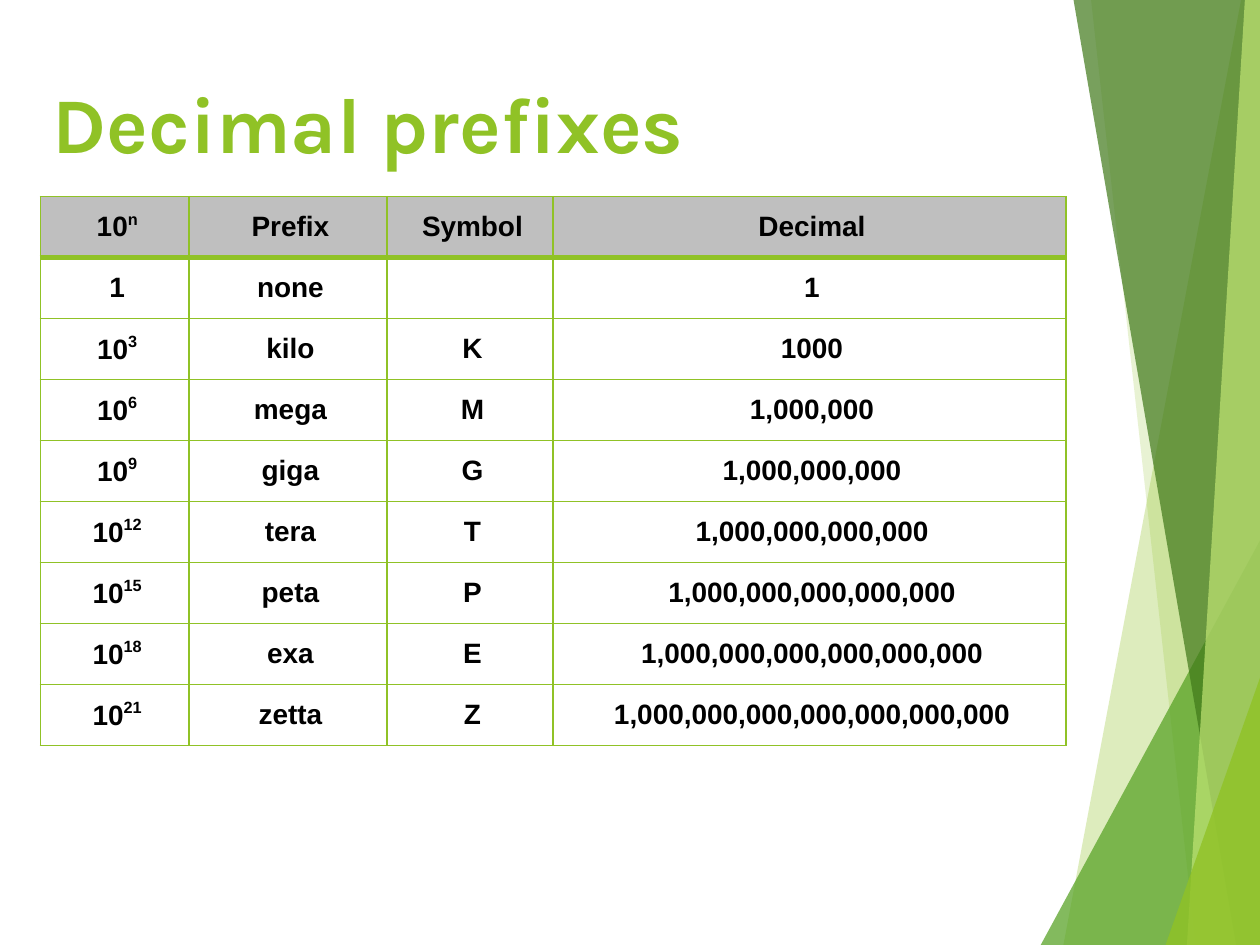
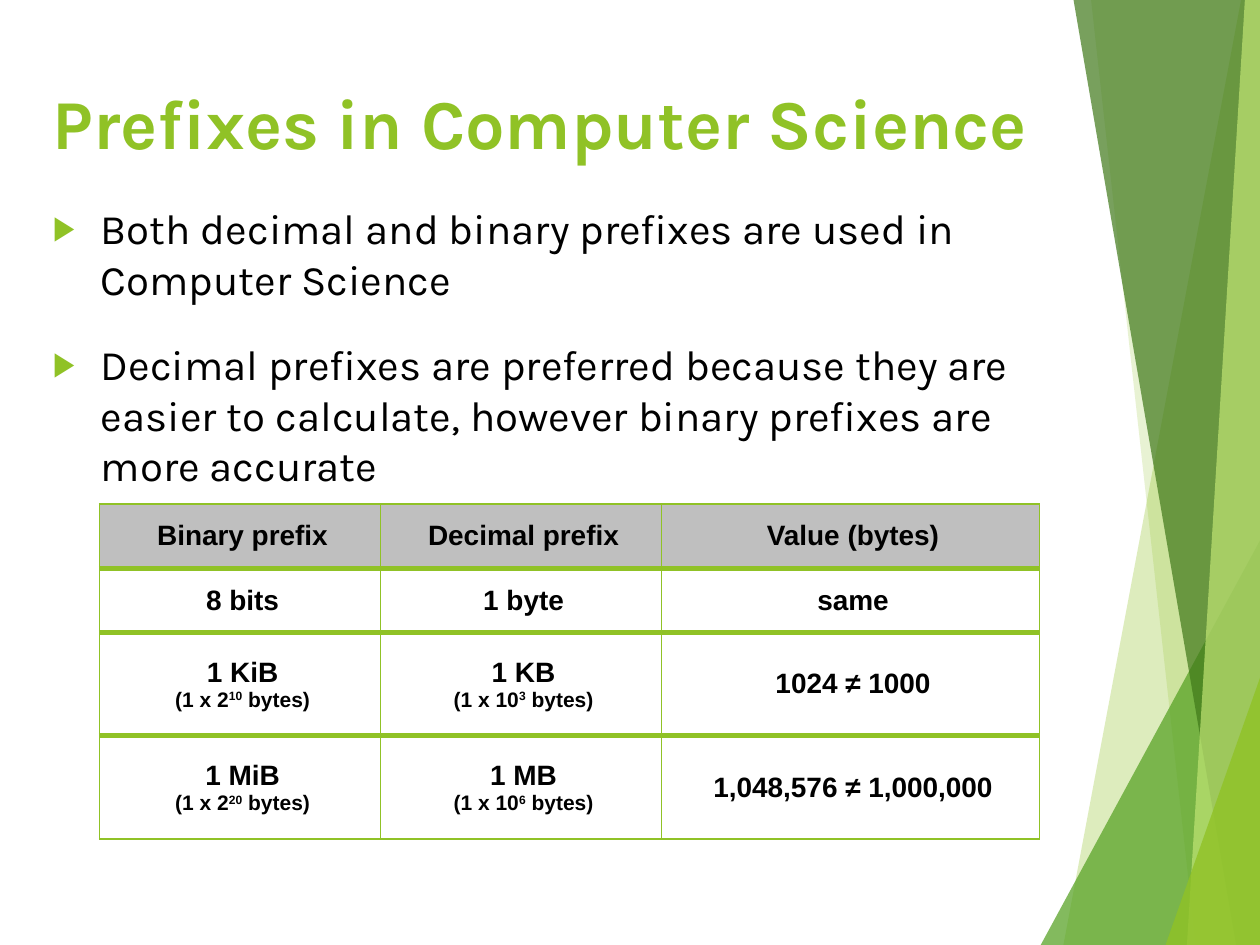
from lxml import etree
from pptx import Presentation
from pptx.dml.color import RGBColor
from pptx.enum.text import MSO_ANCHOR, MSO_AUTO_SIZE, PP_ALIGN
from pptx.oxml.ns import qn
from pptx.util import Emu, Inches, Pt

MIDDLE, TOP = MSO_ANCHOR.MIDDLE, MSO_ANCHOR.TOP
CENTER, LEFT = PP_ALIGN.CENTER, PP_ALIGN.LEFT
NO_FIT = MSO_AUTO_SIZE.NONE
TITLE_AND_CONTENT, TITLE_ONLY = 1, 5

# Content: ^ switches superscript on and off, a new line starts a small line
DECIMAL_ROWS = [["10^n", "Prefix", "Symbol", "Decimal"], ["1", "none", "", "1"]]
DECIMAL_ROWS += [
    [f"10^{power}", prefix, symbol, "1000" if power == 3 else f"{10 ** power:,}"]
    for power, prefix, symbol in [
        (3, "kilo", "K"), (6, "mega", "M"), (9, "giga", "G"), (12, "tera", "T"),
        (15, "peta", "P"), (18, "exa", "E"), (21, "zetta", "Z"),
    ]
]
SCIENCE_ROWS = [
    ["Binary prefix", "Decimal prefix", "Value (bytes)"],
    ["8 bits", "1 byte", "same"],
    ["1 KiB\n(1 x 2^10^ bytes)", "1 KB\n(1 x 10^3^ bytes)", "1024 ≠ 1000"],
    ["1 MiB\n(1 x 2^20^ bytes)", "1 MB\n(1 x 10^6^ bytes)", "1,048,576 ≠ 1,000,000"],
]
SCIENCE_POINTS = [
    "Both decimal and binary prefixes are used in Computer Science",
    "Decimal prefixes are preferred because they are easier to calculate, "
    "however binary prefixes are more accurate",
]

# Shared look
GREEN, GREY, BLACK = "90C226", "BFBFBF", "000000"
WIDTH, HEIGHT = 10, 7.5
MARGIN, TEXT_WIDTH, TITLE_TOP, BODY_TOP = 0.32, 7.94, 0.37, 1.56
CELL_FONT = {"name": "Arial", "bold": True}
BODY_FONT = {"name": "Karla", "size": Pt(24), "bold": False}
CELL_SIZE, SMALL_SIZE = 16, 12

# Facets on the right edge: colour, opacity in percent, corners
FACETS = [
    (GREEN, 30, [(9.85, 0), (8.44, HEIGHT), (WIDTH, HEIGHT), (WIDTH, 0)]),
    (GREEN, 20, [(8.66, 0), (9.49, HEIGHT), (WIDTH, HEIGHT), (WIDTH, 0)]),
    ("54A021", 72, [(8.26, HEIGHT), (WIDTH, 4.29), (WIDTH, HEIGHT)]),
    ("3F7819", 70, [(8.52, 0), (9.81, HEIGHT), (WIDTH, HEIGHT), (WIDTH, 0)]),
    ("C0E474", 70, [(9.88, 0), (9.42, HEIGHT), (WIDTH, HEIGHT), (WIDTH, 0)]),
    (GREEN, 80, [(9.25, HEIGHT), (WIDTH, 5.38), (WIDTH, HEIGHT)]),
]


def rgb(value):
    return RGBColor.from_string(value)


def set_attrs(target, values):
    for name, value in values.items():
        setattr(target, name, value)


def format_font(font, values, color):
    set_attrs(font, values)
    font.color.rgb = rgb(color)


def place(shape, left, top, width, height):
    set_attrs(shape, {"left": Inches(left), "top": Inches(top),
                      "width": Inches(width), "height": Inches(height)})


def add_facets(s):
    for color, opacity, corners in FACETS:
        points = [(Inches(x), Inches(y)) for x, y in corners]
        builder = s.shapes.build_freeform(*points[0])
        builder.add_line_segments(points[1:], close=True)
        sp = builder.convert_to_shape()
        sp.shadow.inherit = False
        sp.line.fill.background()
        sp.fill.solid()
        sp.fill.fore_color.rgb = rgb(color)
        clr = sp.fill._xPr.find(".//" + qn("a:srgbClr"))
        etree.SubElement(clr, qn("a:alpha"), val=str(opacity * 1000))


def add_slide(prs, layout, title, size):
    s = prs.slides.add_slide(prs.slide_layouts[layout])
    add_facets(s)
    place(s.shapes.title, MARGIN, TITLE_TOP, TEXT_WIDTH, BODY_TOP - TITLE_TOP)
    tf = s.shapes.title.text_frame
    set_attrs(tf, {"text": title, "vertical_anchor": MIDDLE,
                   "auto_size": NO_FIT, "word_wrap": True})
    p = tf.paragraphs[0]
    p.alignment = LEFT
    format_font(p.runs[0].font, {"name": "Karla", "size": Pt(size), "bold": True}, GREEN)
    return s


def fill_body(body, points):
    place(body, MARGIN, BODY_TOP, TEXT_WIDTH, 5.24)
    tf = body.text_frame
    set_attrs(tf, {"text": "\n".join(points), "vertical_anchor": TOP,
                   "auto_size": NO_FIT, "word_wrap": True})
    for p in tf.paragraphs:
        set_attrs(p, {"alignment": LEFT, "space_before": Pt(20)})
        format_font(p.runs[0].font, BODY_FONT, BLACK)
        pPr = p._p.get_or_add_pPr()
        pPr.set("marL", str(Inches(0.38)))
        pPr.set("indent", str(Inches(-0.38)))
        color = etree.SubElement(pPr, qn("a:buClr"))
        etree.SubElement(color, qn("a:srgbClr"), val=GREEN)
        etree.SubElement(pPr, qn("a:buSzPct"), val="80000")
        etree.SubElement(pPr, qn("a:buChar"), char="▶")


def write_cell(cell, text, raise_by):
    set_attrs(cell, dict.fromkeys(
        ("margin_left", "margin_right", "margin_top", "margin_bottom"), Inches(0.06)))
    cell.vertical_anchor = MIDDLE
    tf = cell.text_frame
    for i, line in enumerate(text.split("\n")):
        p = tf.add_paragraph() if i else tf.paragraphs[0]
        p.alignment = CENTER
        p._p.get_or_add_pPr().set("marL", str(Inches(0.04)))
        for j, part in enumerate(line.split("^")):
            if not part:
                continue
            r = p.add_run()
            r.text = part
            r.font.size = Pt(SMALL_SIZE if i else CELL_SIZE)
            format_font(r.font, CELL_FONT, BLACK)
            if j % 2:
                r.font._element.set("baseline", str(raise_by * 1000))


def set_borders(cell, above, below):
    tcPr = cell._tc.get_or_add_tcPr()
    sides = {"a:lnL": 1, "a:lnR": 1, "a:lnT": above, "a:lnB": below}
    for i, (side, points) in enumerate(sides.items()):
        ln = etree.Element(qn(side), w=str(Pt(points)))
        fill = etree.SubElement(ln, qn("a:solidFill"))
        etree.SubElement(fill, qn("a:srgbClr"), val=GREEN)
        tcPr.insert(i, ln)


def add_grid(s, rows, left, top, widths, heights, rules, raise_by):
    """rules holds the weight of each horizontal line, top to bottom."""
    frame = s.shapes.add_table(len(rows), len(widths), Inches(left), Inches(top),
                               Inches(sum(widths)), Inches(sum(heights)))
    table = frame.table
    set_attrs(table, {"first_row": False, "horz_banding": False})
    for column, width in zip(table.columns, widths):
        column.width = Inches(width)
    for i, (row, height) in enumerate(zip(rows, heights)):
        table.rows[i].height = Inches(height)
        for j, text in enumerate(row):
            cell = table.cell(i, j)
            write_cell(cell, text, raise_by)
            if i == 0:
                cell.fill.solid()
                cell.fill.fore_color.rgb = rgb(GREY)
            else:
                cell.fill.background()
            set_borders(cell, rules[i], rules[i + 1])


def main():
    prs = Presentation()
    prs.slide_width, prs.slide_height = Emu(Inches(WIDTH)), Emu(Inches(HEIGHT))

    # Decimal prefixes
    s = add_slide(prs, TITLE_ONLY, "Decimal prefixes", 45)
    count = len(DECIMAL_ROWS)
    add_grid(s, DECIMAL_ROWS, MARGIN, BODY_TOP, [1.18, 1.57, 1.32, 4.07],
             [4.36 / count] * count, [1, 3] + [1] * (count - 1), 40)

    # Prefixes in Computer Science
    s = add_slide(prs, TITLE_AND_CONTENT, "Prefixes in Computer Science", 40)
    fill_body(s.placeholders[1], SCIENCE_POINTS)
    add_grid(s, SCIENCE_ROWS, 0.79, 4, [2.23, 2.23, 3],
             [0.51, 0.51, 0.82, 0.82], [1, 3, 3, 3, 1], 30)

    prs.save("out.pptx")


if __name__ == "__main__":
    main()
